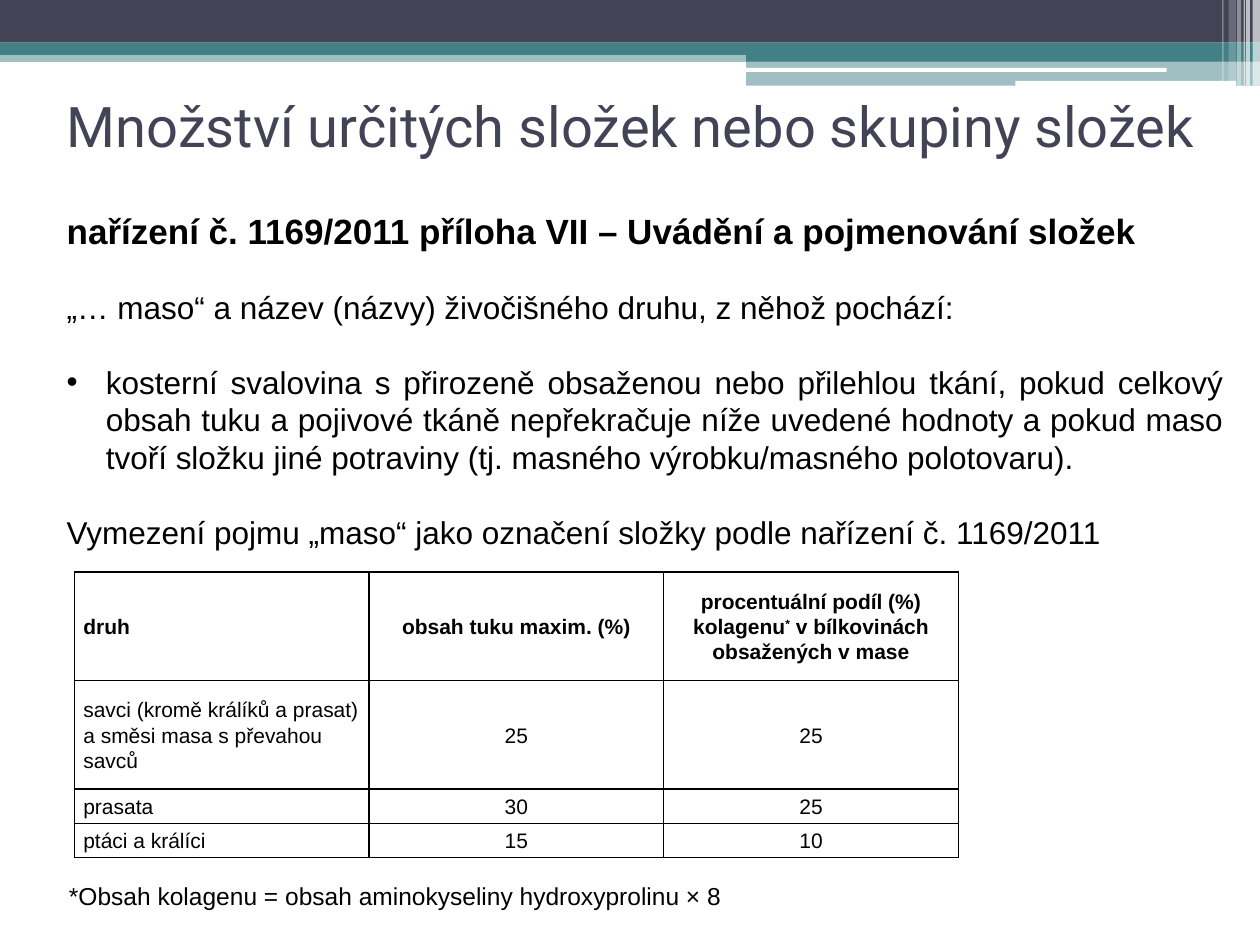
import pptx
import pptx.dml.color
import pptx.enum.shapes
import pptx.enum.text
import pptx.oxml.ns
import pptx.util
from lxml import etree

Cm = pptx.util.Cm
Pt = pptx.util.Pt
ALIGN = pptx.enum.text.PP_ALIGN
ANCHOR = pptx.enum.text.MSO_ANCHOR
KIND = pptx.enum.shapes.MSO_SHAPE
qn = pptx.oxml.ns.qn

DARK, TEAL, WHITE, BLACK = "424456", "438086", "FFFFFF", "000000"

BANDS = [
    (0, 1.02, 25.4, 0.23, TEAL, 50),
    (0, 0, 25.4, 0.86, DARK, 100),
    (0, 0.86, 25.4, 0.25, TEAL, 100),
    (15.04, 0.99, 10.36, 0.25, TEAL, 100),
    (15.04, 1.22, 10.36, 0.51, TEAL, 50),
]
STRIPS = [(15.01, 1.37, 8.51, 0.08), (20.47, 1.63, 4.45, 0.1)]
RAYS = [
    (25.25, 0.15, 1.73, 65),
    (25.12, 0.08, 1.73, 65),
    (25.07, 0.03, 1.73, 60),
    (24.94, 0.08, 1.73, 40),
    (24.77, 0.15, 1.63, 20),
    (24.64, 0.03, 1.63, 30),
]
ROWS = [
    ("druh", "obsah tuku maxim. (%)",
     "procentuální podíl (%) kolagenu|*| v bílkovinách obsažených v mase"),
    ("savci (kromě králíků a prasat) a směsi masa s převahou savců", "25", "25"),
    ("prasata", "30", "25"),
    ("ptáci a králíci", "15", "10"),
]


def tint(code):
    """Turn a hex string into a colour."""
    return pptx.dml.color.RGBColor.from_string(code)


def write(para, text, size=18, font="Arial", color=BLACK, bold=False,
          align=ALIGN.LEFT, before=0, line=1.0):
    """Fill a paragraph; every second part between bars is raised."""
    para.alignment = align
    para.space_before, para.space_after = Pt(before), Pt(0)
    para.line_spacing = line
    for i, part in enumerate(text.split("|")):
        run = para.add_run()
        run.text = part
        run.font.size, run.font.name, run.font.bold = Pt(size), font, bold
        run.font.color.rgb = tint(color)
        if i % 2:
            run.font._element.set("baseline", "30000")


def place(shape, left, top, width, height):
    """Move and size a shape, in centimetres."""
    shape.left, shape.top = Cm(left), Cm(top)
    shape.width, shape.height = Cm(width), Cm(height)


def add_bar(slide, left, top, width, height, color, alpha=100,
            kind=KIND.RECTANGLE):
    """Draw a plain bar without outline."""
    bar = slide.shapes.add_shape(kind, Cm(left), Cm(top), Cm(width), Cm(height))
    bar.shadow.inherit = False
    bar.line.fill.background()
    bar.fill.solid()
    bar.fill.fore_color.rgb = tint(color)
    if alpha < 100:
        tone = next(bar._element.spPr.iter(qn("a:srgbClr")))
        etree.SubElement(tone, qn("a:alpha"), val=str(alpha * 1000))


def add_trim(slide):
    """Draw the band of bars along the top."""
    for band in BANDS:
        add_bar(slide, *band)
    for strip in STRIPS:
        add_bar(slide, *strip, WHITE, kind=KIND.ROUNDED_RECTANGLE)
    for left, width, height, alpha in RAYS:
        add_bar(slide, left, 0, width, height, WHITE, alpha)


def mark(para, sign=None, indent=0.0):
    """Set the bullet and hanging indent of a paragraph."""
    props = para._p.get_or_add_pPr()
    props.set("marL", str(Cm(indent)))
    props.set("indent", str(-Cm(indent)))
    if sign:
        etree.SubElement(props, qn("a:buFont"), typeface="Arial")
        etree.SubElement(props, qn("a:buChar"), char=sign)
    else:
        etree.SubElement(props, qn("a:buNone"))


def fill_title(title):
    """Write the heading."""
    place(title, 1.09, 1.42, 23.42, 2.21)
    frame = title.text_frame
    frame.auto_size = pptx.enum.text.MSO_AUTO_SIZE.NONE
    frame.vertical_anchor = ANCHOR.MIDDLE
    write(frame.paragraphs[0], "Množství určitých složek nebo skupiny složek",
          size=32, font="Roboto", color=DARK)


def fill_body(body):
    """Write the paragraphs above the table."""
    place(body, 1.09, 4.09, 23.83, 7.26)
    frame = body.text_frame
    frame.auto_size = pptx.enum.text.MSO_AUTO_SIZE.NONE
    gap = {"before": 21}
    just = {"align": ALIGN.JUSTIFY, **gap}
    lines = [
        ("nařízení č. 1169/2011 příloha VII – Uvádění a pojmenování složek",
         {"size": 20, "bold": True}, ()),
        ("„… maso“ a název (názvy) živočišného druhu, z něhož pochází:", just, ()),
        ("kosterní svalovina s přirozeně obsaženou nebo přilehlou tkání, pokud "
         "celkový obsah tuku a pojivové tkáně nepřekračuje níže uvedené hodnoty "
         "a pokud maso tvoří složku jiné potraviny (tj. masného výrobku/masného "
         "polotovaru).", just, ("•", 0.79)),
        ("Vymezení pojmu „maso“ jako označení složky podle nařízení č. 1169/2011",
         gap, ()),
    ]
    for i, (text, style, sign) in enumerate(lines):
        para = frame.add_paragraph() if i else frame.paragraphs[0]
        write(para, text, **style)
        mark(para, *sign)


def frame_cell(cell):
    """Give a cell thin black borders and no fill."""
    cell.fill.background()
    props = cell._tc.get_or_add_tcPr()
    for i, side in enumerate(("lnL", "lnR", "lnT", "lnB")):
        edge = etree.Element(qn("a:" + side), w=str(Pt(1)))
        solid = etree.SubElement(edge, qn("a:solidFill"))
        etree.SubElement(solid, qn("a:srgbClr"), val=BLACK)
        props.insert(i, edge)


def add_grid(slide):
    """Build the table of limits."""
    heights = (2.19, 2.19, 0.69, 0.69)
    grid = slide.shapes.add_table(len(ROWS), 3, Cm(1.5), Cm(11.53),
                                  Cm(17.82), Cm(sum(heights))).table
    grid.first_row = grid.horz_banding = False
    for col in grid.columns:
        col.width = Cm(5.94)
    for r, (texts, height) in enumerate(zip(ROWS, heights)):
        grid.rows[r].height = Cm(height)
        for c, text in enumerate(texts):
            cell = grid.cell(r, c)
            cell.vertical_anchor = ANCHOR.MIDDLE
            cell.margin_left = cell.margin_right = Cm(0.18)
            cell.margin_top = cell.margin_bottom = 0
            write(cell.text_frame.paragraphs[0], text, size=12, bold=r == 0,
                  align=ALIGN.CENTER if c else ALIGN.LEFT, line=1.07)
            frame_cell(cell)


def add_note(slide):
    """Write the footnote below the table."""
    box = slide.shapes.add_textbox(Cm(1.14), Cm(17.63), Cm(22.61), Cm(0.86))
    box.text_frame.word_wrap = True
    write(box.text_frame.paragraphs[0],
          "*Obsah kolagenu = obsah aminokyseliny hydroxyprolinu × 8", size=14)


def main():
    """Build and save the slide."""
    deck = pptx.Presentation()
    deck.slide_width, deck.slide_height = Cm(25.4), Cm(19.05)
    slide = deck.slides.add_slide(deck.slide_layouts[1])
    title, body = slide.placeholders
    add_trim(slide)
    for holder in (title, body):
        slide.shapes._spTree.append(holder._element)
    fill_title(title)
    fill_body(body)
    add_grid(slide)
    add_note(slide)
    deck.save("out.pptx")


if __name__ == "__main__":
    main()
